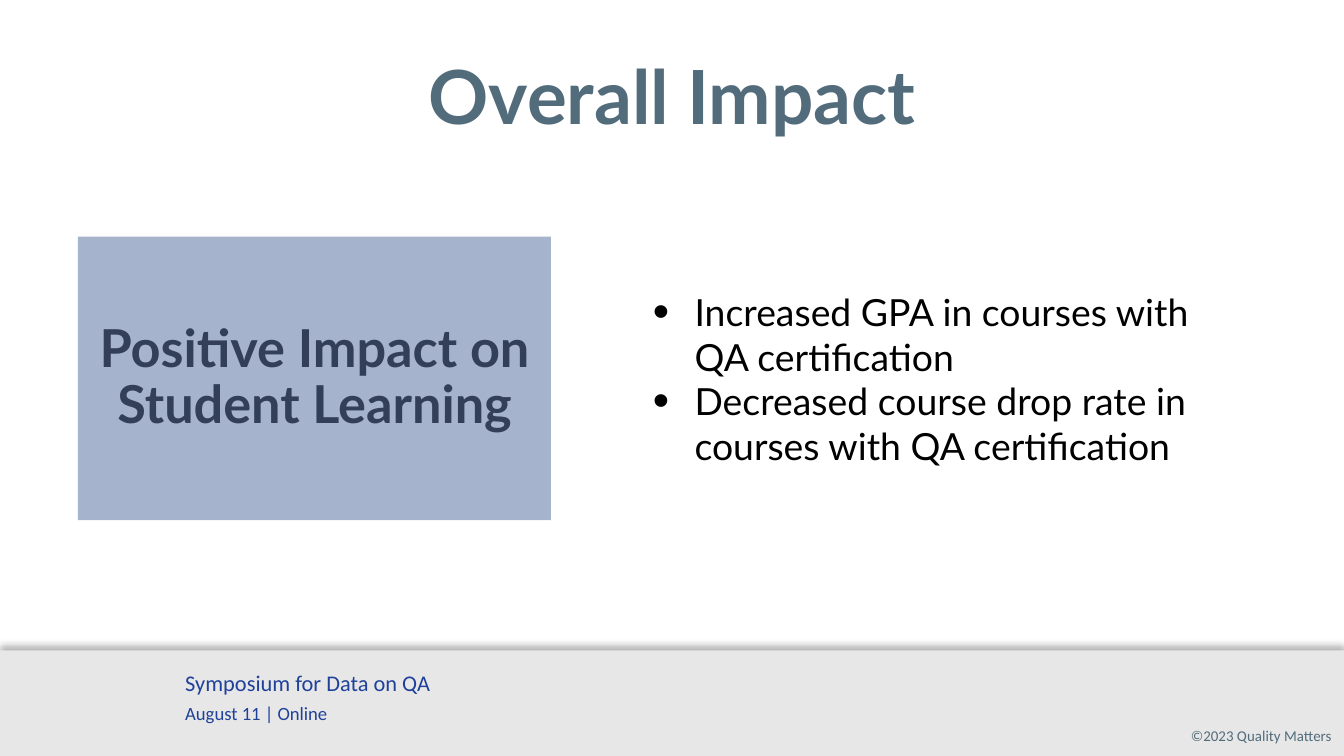
from lxml import etree
from pptx import Presentation
from pptx.dml.color import RGBColor
from pptx.enum.shapes import MSO_SHAPE
from pptx.enum.text import MSO_ANCHOR, PP_ALIGN
from pptx.oxml.ns import qn
from pptx.util import Inches, Pt

RECTANGLE = MSO_SHAPE.RECTANGLE
TOP, MIDDLE = MSO_ANCHOR.TOP, MSO_ANCHOR.MIDDLE
LEFT, CENTER, RIGHT = PP_ALIGN.LEFT, PP_ALIGN.CENTER, PP_ALIGN.RIGHT

BLACK = RGBColor(0x00, 0x00, 0x00)
SLATE = RGBColor(0x52, 0x6C, 0x7C)
NAVY = RGBColor(0x33, 0x3F, 0x58)
BLUE = RGBColor(0x1F, 0x41, 0x9A)
PANEL_BLUE = RGBColor(0xA6, 0xB3, 0xCC)
FOOTER_GRAY = RGBColor(0xE7, 0xE7, 0xE7)

SLIDE_WIDTH = 10
SLIDE_HEIGHT = SLIDE_WIDTH * 9 / 16
FOOTER_TOP = 4.84
BULLET_INDENT = 0.31


def set_frame(shape, anchor=TOP, margins=(0.1, 0.05, 0.1, 0.05)):
    frame = shape.text_frame
    frame.word_wrap = True
    frame.vertical_anchor = anchor
    (frame.margin_left, frame.margin_top,
     frame.margin_right, frame.margin_bottom) = [Inches(m) for m in margins]
    return frame


def add_text_box(slide, left, top, width, height, **options):
    box = slide.shapes.add_textbox(
        Inches(left), Inches(top), Inches(width), Inches(height))
    return set_frame(box, **options)


def add_rectangle(slide, left, top, width, height, color):
    shape = slide.shapes.add_shape(
        RECTANGLE, Inches(left), Inches(top), Inches(width), Inches(height))
    shape.shadow.inherit = False
    shape.fill.solid()
    shape.fill.fore_color.rgb = color
    shape.line.fill.background()
    return shape


def write(paragraph, text, size, color, font="Lato", bold=False, align=LEFT):
    paragraph.alignment = align
    run = paragraph.add_run()
    run.text = text
    run.font.name = font
    run.font.size = Pt(size)
    run.font.bold = bold
    run.font.color.rgb = color


def add_upward_shadow(shape):
    effects = shape._element.spPr.find(qn("a:effectLst"))
    shadow = etree.SubElement(
        effects, qn("a:outerShdw"), blurRad=str(Pt(4)), dist=str(Pt(3)),
        dir=str(270 * 60000), algn="b", rotWithShape="0")
    color = etree.SubElement(shadow, qn("a:srgbClr"), val=str(BLACK))
    etree.SubElement(color, qn("a:alpha"), val="29000")


def add_bullet(paragraph):
    properties = paragraph._p.get_or_add_pPr()
    properties.set("marL", str(Inches(BULLET_INDENT)))
    properties.set("indent", str(-Inches(BULLET_INDENT)))
    color = etree.SubElement(properties, qn("a:buClr"))
    etree.SubElement(color, qn("a:srgbClr"), val=str(BLACK))
    etree.SubElement(properties, qn("a:buSzPct"), val="125000")
    etree.SubElement(properties, qn("a:buFont"), typeface="Arial")
    etree.SubElement(properties, qn("a:buChar"), char="•")


def add_footer(slide, left, top, width, height):
    band = add_rectangle(slide, left, top, width, height, FOOTER_GRAY)
    add_upward_shadow(band)

    copyright_frame = add_text_box(
        slide, left + width - 1.68, top + 0.52, 1.59, 0.24,
        margins=(0.1, 0.05, 0, 0.05))
    write(copyright_frame.paragraphs[0], "©2023 Quality Matters", 8, SLATE,
          font="Calibri", align=RIGHT)

    event_frame = add_text_box(slide, left + 1.28, top + 0.09, 6.39, 0.51)
    write(event_frame.paragraphs[0], "Symposium for Data on QA", 12, BLUE,
          font="Calibri")
    date = event_frame.add_paragraph()
    date.space_before = Pt(3)
    write(date, "August 11 | Online", 10, BLUE, font="Calibri")


def add_title(slide, left, top, width, height, text):
    frame = add_text_box(slide, left, top, width, height, anchor=MIDDLE)
    write(frame.paragraphs[0], text, 40, SLATE, bold=True, align=CENTER)


def add_bullet_list(slide, left, top, width, height, items):
    frame = add_text_box(slide, left, top, width, height)
    for index, item in enumerate(items):
        paragraph = frame.add_paragraph() if index else frame.paragraphs[0]
        add_bullet(paragraph)
        write(paragraph, item, 20, BLACK)


def add_impact_panel(slide, left, top, width, height, text):
    panel = add_rectangle(slide, left, top, width, height, PANEL_BLUE)
    frame = set_frame(panel, anchor=MIDDLE, margins=(0.12,) * 4)
    paragraph = frame.paragraphs[0]
    paragraph.line_spacing = 0.9
    write(paragraph, text, 28, NAVY, bold=True, align=CENTER)


def main():
    presentation = Presentation()
    presentation.slide_width = Inches(SLIDE_WIDTH)
    presentation.slide_height = Inches(SLIDE_HEIGHT)
    slide = presentation.slides.add_slide(presentation.slide_layouts[6])

    add_footer(slide, 0, FOOTER_TOP, SLIDE_WIDTH, SLIDE_HEIGHT - FOOTER_TOP)
    add_title(slide, 0, 0.36, SLIDE_WIDTH, 0.69, "Overall Impact")
    add_bullet_list(slide, 4.76, 2.1, 4.57, 1.42, [
        "Increased GPA in courses with QA certification",
        "Decreased course drop rate in courses with QA certification",
    ])
    add_impact_panel(slide, 0.58, 1.76, 3.52, 2.11,
                     "Positive Impact on Student Learning")

    presentation.save("out.pptx")


if __name__ == "__main__":
    main()
